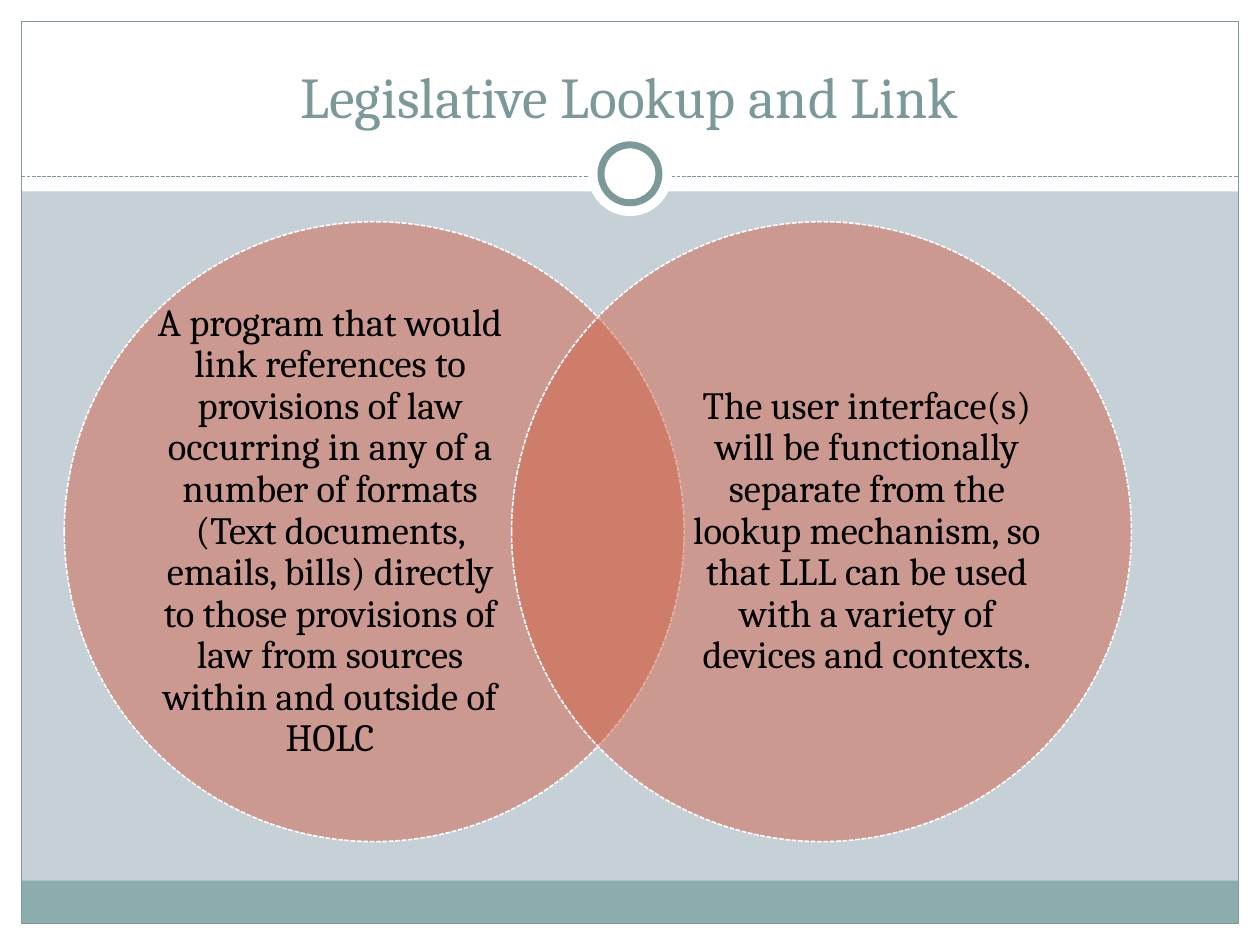
from lxml import etree
from pptx import Presentation
from pptx.dml.color import RGBColor
from pptx.enum.dml import MSO_LINE
from pptx.enum.shapes import MSO_CONNECTOR, MSO_SHAPE
from pptx.enum.text import MSO_ANCHOR, PP_ALIGN
from pptx.oxml.ns import qn
from pptx.util import Inches, Pt

RECTANGLE, OVAL = MSO_SHAPE.RECTANGLE, MSO_SHAPE.OVAL
STRAIGHT = MSO_CONNECTOR.STRAIGHT
DASH = MSO_LINE.SQUARE_DOT
CENTER = PP_ALIGN.CENTER
MIDDLE, BOTTOM = MSO_ANCHOR.MIDDLE, MSO_ANCHOR.BOTTOM

TITLE = "Legislative Lookup and Link"
CIRCLE_TEXTS = [
    (0.69, "A program that would link references to provisions of law occurring "
           "in any of a number of formats (Text documents, emails, bills) directly "
           "to those provisions of law from sources within and outside of HOLC"),
    (1.40, "The user interface(s) will be functionally separate from the lookup "
           "mechanism, so that LLL can be used with a variety of devices and contexts."),
]

FONT = "Cambria"
WHITE, BLACK, SLATE, TEAL = "FFFFFF", "000000", "7C999A", "8CADAE"
RUST, MIST = "D16349", "C5D1D7"

WIDTH, HEIGHT = 10, 7.5
MARGIN = 0.17
HEADER = 1.52
FOOTER = 0.34
RULE_Y, RING_Y = 1.4, 1.38
CIRCLE = 4.92
CIRCLE_LEFT, CIRCLE_TOP, CIRCLE_STEP = 0.51, 1.76, 3.55
TEXT_WIDTH, TEXT_HEIGHT = 2.84, 3.76


def color(value):
    return RGBColor.from_string(value)


def set_line(line, value, weight, dash=None):
    line.color.rgb = color(value)
    line.width = Pt(weight)
    if dash:
        line.dash_style = dash


def add_shape(page, kind, area, fill=None, line=None, alpha=None):
    shape = page.shapes.add_shape(kind, *[Inches(v) for v in area])
    shape.shadow.inherit = False
    if fill:
        shape.fill.solid()
        shape.fill.fore_color.rgb = color(fill)
    else:
        shape.fill.background()
    if alpha:
        tint = shape.fill._xPr.find(qn("a:solidFill"))[0]
        etree.SubElement(tint, qn("a:alpha")).set("val", str(alpha * 1000))
    if line:
        set_line(shape.line, *line)
    else:
        shape.line.fill.background()


def add_text(page, area, text, size, value, anchor, spacing=1.0, inset=0.05):
    box = page.shapes.add_textbox(*[Inches(v) for v in area])
    frame = box.text_frame
    frame.word_wrap = True
    frame.vertical_anchor = anchor
    frame.margin_left = frame.margin_right = Inches(inset * 2)
    frame.margin_top = frame.margin_bottom = Inches(inset)
    frame.text = text
    para = frame.paragraphs[0]
    para.alignment = CENTER
    para.line_spacing = spacing
    font = para.runs[0].font
    font.name, font.size = FONT, Pt(size)
    font.color.rgb = color(value)


def add_frame(page):
    inner_width, inner_height = WIDTH - 2 * MARGIN, HEIGHT - 2 * MARGIN
    bottom, right = HEIGHT - MARGIN, WIDTH - MARGIN
    bands = [
        (0, bottom, WIDTH, MARGIN, WHITE),
        (0, 0, WIDTH, HEADER, WHITE),
        (0, 0, MARGIN, HEIGHT, WHITE),
        (right, 0, MARGIN, HEIGHT, WHITE),
        (MARGIN, bottom - FOOTER, inner_width, FOOTER, TEAL),
    ]
    for *area, fill in bands:
        add_shape(page, RECTANGLE, area, fill)
    add_shape(page, RECTANGLE, (MARGIN, MARGIN, inner_width, inner_height),
              line=(SLATE, 0.75))
    ends = [Inches(v) for v in (MARGIN, RULE_Y, right, RULE_Y)]
    rule = page.shapes.add_connector(STRAIGHT, *ends)
    set_line(rule.line, SLATE, 0.75, DASH)
    etree.SubElement(rule._element.spPr, qn("a:effectLst"))
    for size, line in [(0.67, None), (0.46, (SLATE, 4))]:
        area = (WIDTH / 2 - size / 2, RING_Y - size / 2, size, size)
        add_shape(page, OVAL, area, WHITE, line)


def add_circles(page):
    text_top = CIRCLE_TOP + (CIRCLE - TEXT_HEIGHT) / 2
    for index, (offset, text) in enumerate(CIRCLE_TEXTS):
        left = CIRCLE_LEFT + index * CIRCLE_STEP
        add_shape(page, OVAL, (left, CIRCLE_TOP, CIRCLE, CIRCLE), RUST,
                  (WHITE, 0.9, DASH), alpha=50)
        add_text(page, (left + offset, text_top, TEXT_WIDTH, TEXT_HEIGHT),
                 text, 22, BLACK, MIDDLE, spacing=0.9, inset=0)


def main():
    deck = Presentation()
    deck.slide_width, deck.slide_height = Inches(WIDTH), Inches(HEIGHT)
    page = deck.slides.add_slide(deck.slide_layouts[6])
    page.background.fill.solid()
    page.background.fill.fore_color.rgb = color(MIST)
    add_frame(page)
    add_text(page, (0.33, 0.25, 9.33, 0.83), TITLE, 33, SLATE, BOTTOM)
    add_circles(page)
    deck.save("out.pptx")


if __name__ == "__main__":
    main()
